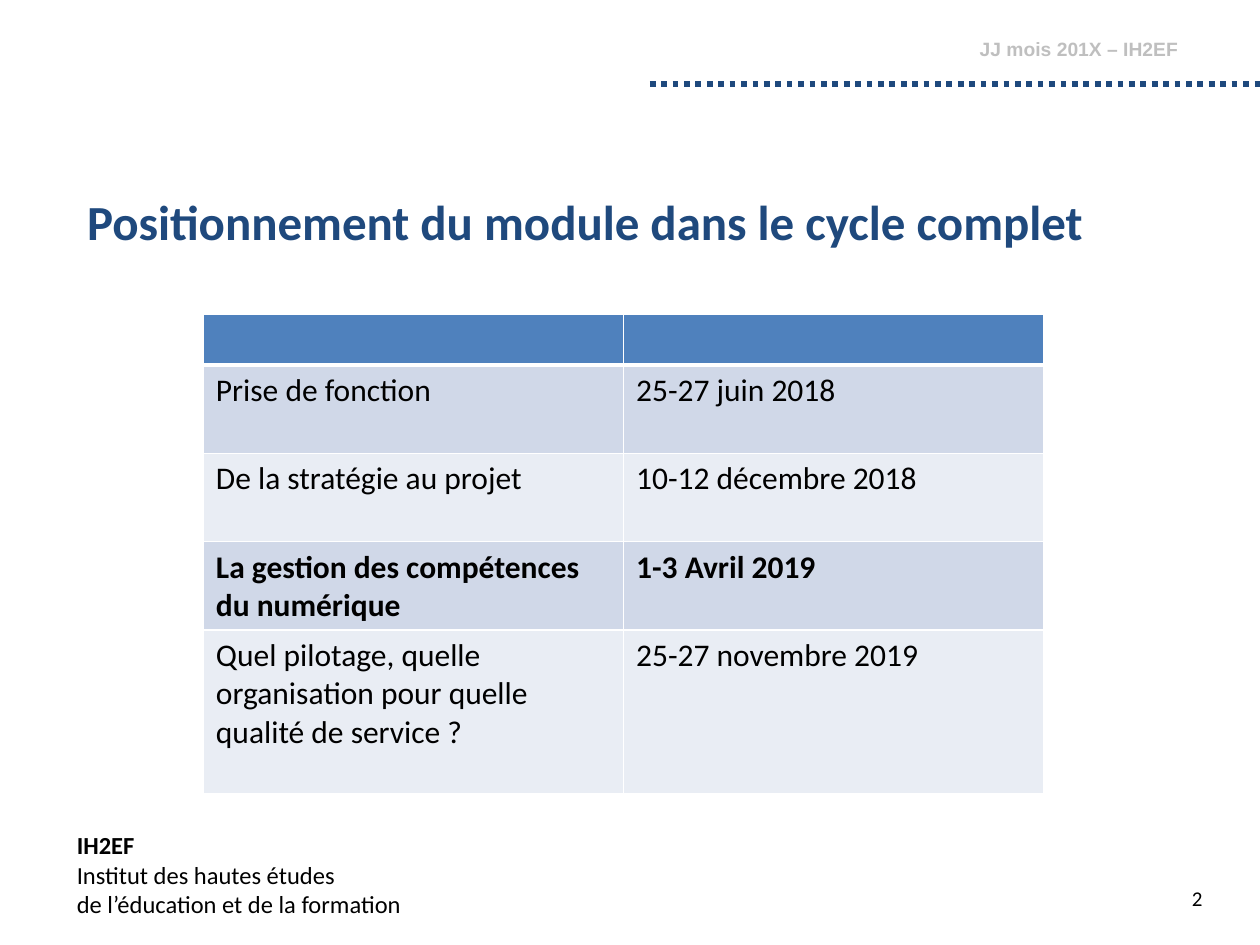
from lxml import etree
from pptx import Presentation
from pptx.dml.color import RGBColor
from pptx.enum import dml, shapes, text
from pptx.oxml import ns
from pptx.util import Cm, Pt

NAVY = RGBColor(0x1F, 0x49, 0x7D)
BLUE = RGBColor(0x4F, 0x81, 0xBD)
DARK = RGBColor(0xD0, 0xD8, 0xE8)
PALE = RGBColor(0xE9, 0xED, 0xF4)
GREY = RGBColor(0xBF, 0xBF, 0xBF)
BLACK = RGBColor(0, 0, 0)


def write(frame, words, size=18, color=BLACK, font="Calibri", bold=False,
          align=text.PP_ALIGN.LEFT, anchor=text.MSO_ANCHOR.TOP):
    """Fill a text frame or cell; each line of words becomes a paragraph."""
    body = getattr(frame, "text_frame", frame)
    body.word_wrap = True
    body.text = words
    frame.vertical_anchor = anchor
    for para in body.paragraphs:
        para.alignment = align
        para.font.size = Pt(size)
        para.font.name = font
        para.font.bold = bold
        para.font.color.rgb = color


def edge(cell, side, width):
    """Draw a white border on one side (L, R, T or B) of a cell."""
    props = cell._tc.get_or_add_tcPr()
    line = etree.SubElement(props, ns.qn(f"a:ln{side}"), w=str(Pt(width)))
    fill = etree.SubElement(line, ns.qn("a:solidFill"))
    etree.SubElement(fill, ns.qn("a:srgbClr"), val="FFFFFF")


prs = Presentation()
prs.slide_width, prs.slide_height = Cm(25.4), Cm(19.05)
slide = prs.slides.add_slide(prs.slide_layouts[5])

# Title
title = slide.shapes.title
title.left, title.top = Cm(1.5), Cm(3.73)
title.width, title.height = Cm(22.8), Cm(8.64)
write(title.text_frame, "Positionnement du module dans le cycle complet",
      size=28, color=NAVY, bold=True)

# Header and footer
head = slide.shapes.add_textbox(Cm(19.5), Cm(0.33), Cm(7.6), Cm(1.3))
write(head.text_frame, "JJ mois 201X – IH2EF", size=11, color=GREY,
      font="Arial", bold=True, anchor=text.MSO_ANCHOR.MIDDLE)

rule = slide.shapes.add_connector(shapes.MSO_CONNECTOR.STRAIGHT,
                                  Cm(13.1), Cm(1.7), Cm(25.7), Cm(1.7))
rule.line.color.rgb = NAVY
rule.line.width = Pt(3.25)
rule.line.dash_style = dml.MSO_LINE.ROUND_DOT
etree.SubElement(rule._element.spPr, ns.qn("a:effectLst"))

foot = slide.shapes.add_textbox(Cm(1.3), Cm(16.61), Cm(7.72), Cm(2.06))
write(foot.text_frame, "IH2EF\nInstitut des hautes études\n"
      "de l’éducation et de la formation", size=14)
foot.text_frame.paragraphs[0].font.bold = True

page = slide.shapes.add_textbox(Cm(17.3), Cm(17.73), Cm(7.19), Cm(0.76))
write(page.text_frame, "2", size=12, align=text.PP_ALIGN.RIGHT)

# Table of modules: name, dates, row height
rows = [
    ("", "", 1.03),
    ("Prise de fonction", "25-27 juin 2018", 1.78),
    ("De la stratégie au projet", "10-12 décembre 2018", 1.78),
    ("La gestion des compétences du numérique", "1-3 Avril 2019", 1.78),
    ("Quel pilotage, quelle organisation pour quelle qualité de service ?",
     "25-27 novembre 2019", 3.3),
]
now = 3  # row of the present module
grid = slide.shapes.add_table(len(rows), 2, Cm(4.1), Cm(6.33),
                              Cm(16.94), Cm(9.67)).table
for r, (*words, high) in enumerate(rows):
    grid.rows[r].height = Cm(high)
    for c, word in enumerate(words):
        cell = grid.cell(r, c)
        write(cell, word, bold=r == now)
        for side in "LRTB":
            thick = (r, side) in ((0, "B"), (1, "T"))
            edge(cell, side, 3 if thick else 1)
        cell.fill.solid()
        cell.fill.fore_color.rgb = BLUE if r == 0 else DARK if r % 2 else PALE

prs.save("out.pptx")
